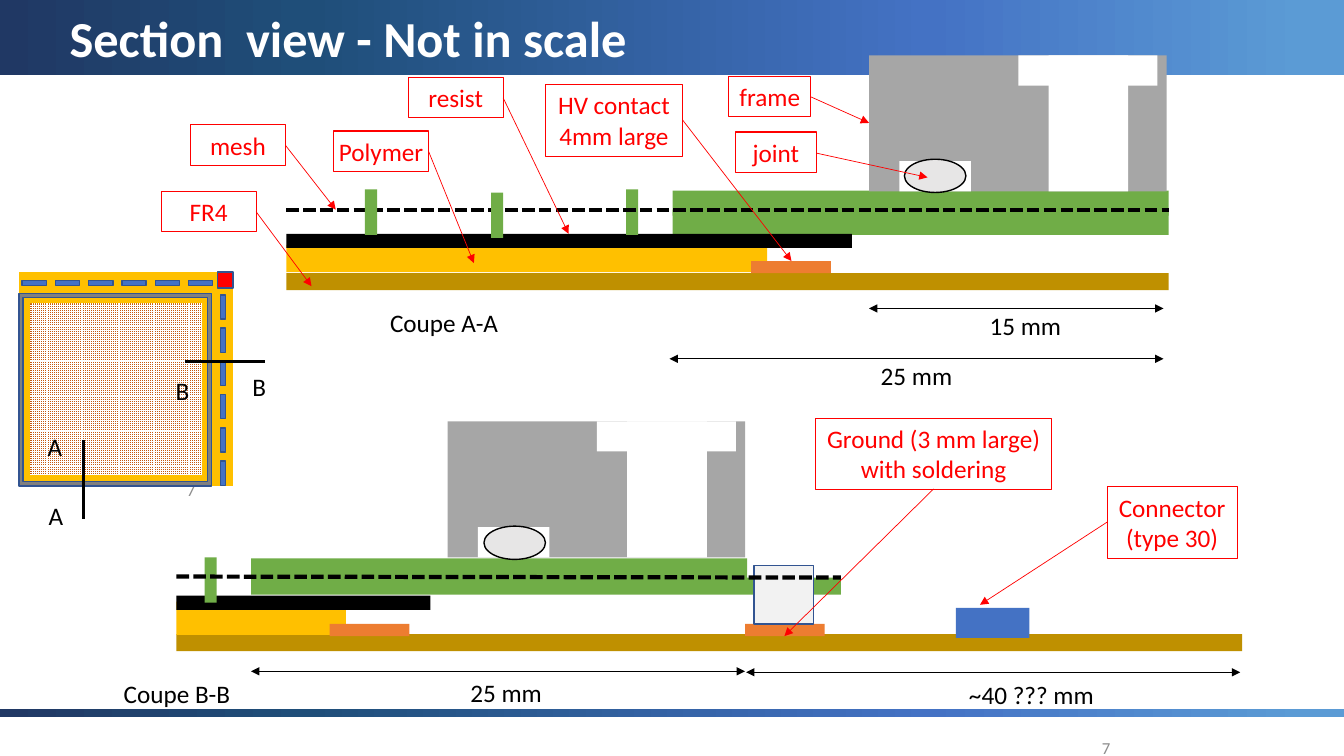
from copy import deepcopy
from dataclasses import dataclass

from lxml.etree import SubElement
from pptx import Presentation
from pptx.dml.color import RGBColor
from pptx.enum.dml import MSO_LINE, MSO_PATTERN
from pptx.enum.shapes import MSO_CONNECTOR as Link, MSO_SHAPE as Preset
from pptx.enum.text import MSO_ANCHOR as Anchor, PP_ALIGN as Align
from pptx.oxml.ns import qn
from pptx.util import Inches, Pt


@dataclass(frozen=True)
class Theme:
    font: str = "Calibri"
    title_size: int = 36
    label_size: int = 18
    number_size: int = 12
    white: str = "FFFFFF"
    black: str = "000000"
    red: str = "FF0000"
    number: str = "8C8C8C"
    board: str = "BF9000"
    green: str = "70AD47"
    yellow: str = "FFC000"
    copper: str = "ED7D31"
    grid: str = "C55A11"
    frame: str = "A6A6A6"
    rim: str = "808080"
    joint: str = "E7E6E6"
    solder: str = "F2F2F2"
    blue: str = "4472C4"
    outline: str = "325491"
    band: tuple = ((0, "203864"), (0.23, "1F4E79"), (0.69, "4472C4"), (0.97, "5B9BD5"))


def rgb(code):
    return RGBColor.from_string(code)


def apply(target, values):
    for name, value in values.items():
        setattr(target, name, value)


class Drawing:
    def __init__(self, page, theme):
        self.page, self.theme = page, theme

    def style(self, shape, fill=None, line=None, width=1):
        shape.shadow.inherit = False
        if fill:
            shape.fill.solid()
            shape.fill.fore_color.rgb = rgb(fill)
        else:
            shape.fill.background()
        if line:
            shape.line.color.rgb = rgb(line)
            shape.line.width = Pt(width)
        else:
            shape.line.fill.background()
        return shape

    def block(self, x, y, w, h, fill=None, line=None, width=1, preset=Preset.RECTANGLE):
        shape = self.page.shapes.add_shape(preset, *map(Inches, (x, y, w, h)))
        return self.style(shape, fill, line, width)

    def band(self, y, h):
        shape = self.block(0, y, 13.33, h)
        shape.fill.gradient()
        shape.fill.gradient_angle = 0
        stops = shape.element.spPr.find(qn("a:gradFill")).find(qn("a:gsLst"))
        while len(stops) < len(self.theme.band):
            stops.append(deepcopy(stops[0]))
        for stop, (position, code) in zip(shape.fill.gradient_stops, self.theme.band):
            stop.position = position
            stop.color.rgb = rgb(code)

    def set_text(self, box, text, color, size, **changes):
        frame = box.text_frame
        apply(frame, {"word_wrap": False, "vertical_anchor": Anchor.TOP})
        frame.text = text
        for para in frame.paragraphs:
            para.alignment = changes.get("align", Align.CENTER)
            apply(para.font, {"name": self.theme.font, "size": Pt(size),
                              "bold": changes.get("bold", False)})
            para.font.color.rgb = rgb(color)
        return frame

    def title(self, text):
        box = self.page.shapes.title
        apply(box, dict(zip(("left", "top", "width", "height"),
                            map(Inches, (0.59, 0.02, 7.39, 0.71)))))
        self.set_text(box, text, self.theme.white, self.theme.title_size,
                      align=Align.LEFT, bold=True)
        box.element.getparent().append(box.element)  # bring in front of the band

    def label(self, x, y, w, text):
        box = self.page.shapes.add_textbox(*map(Inches, (x, y, w, 0.4)))
        self.set_text(box, text, self.theme.black, self.theme.label_size)

    def number(self, x, y, w, h):
        box = self.page.shapes.add_textbox(*map(Inches, (x, y, w, h)))
        frame = self.set_text(box, "7", self.theme.number, self.theme.number_size)
        frame.vertical_anchor = Anchor.MIDDLE

    def line(self, x1, y1, x2, y2, color, width, ends=(), dashed=False):
        link = self.page.shapes.add_connector(Link.STRAIGHT, *map(Inches, (x1, y1, x2, y2)))
        link.line.color.rgb = rgb(color)
        link.line.width = Pt(width)
        if dashed:
            link.line.dash_style = MSO_LINE.SQUARE_DOT
        properties = link.element.spPr
        for end in ends:
            SubElement(properties.find(qn("a:ln")), qn(f"a:{end}"), type="triangle")
        SubElement(properties, qn("a:effectLst"))

    def dimension(self, x1, x2, y):
        self.line(x1, y, x2, y, self.theme.black, 0.5, ("headEnd", "tailEnd"))

    def callout(self, text, area, start, end):
        red = self.theme.red
        self.line(*start, *end, red, 0.5, ("tailEnd",))
        self.set_text(self.block(*area, line=red, width=0.75), text, red, self.theme.label_size)

    def frame(self, x, y):
        self.block(x, y, 2.95, 1.35, self.theme.frame)
        for dx, dy, w, h in ((0.3, 1.05, 0.71, 0.3), (1.78, 0, 0.79, 1.35), (1.48, 0, 1.38, 0.3)):
            self.block(x + dx, y + dy, w, h, self.theme.white)

    def joint(self, x, y):
        self.block(x, y, 0.61, 0.33, self.theme.joint, self.theme.black, preset=Preset.OVAL)

    def rim(self, x, y, size, edge):
        far_x, far_y = x + size, y + size
        outside = [(x, y), (far_x, y), (far_x, far_y), (x, far_y)]
        inside = [(x + edge, y + edge), (x + edge, far_y - edge),
                  (far_x - edge, far_y - edge), (far_x - edge, y + edge)]
        outside, inside = ([(Inches(a), Inches(b)) for a, b in ring] for ring in (outside, inside))
        builder = self.page.shapes.build_freeform(*outside[0], scale=1.0)
        builder.add_line_segments(outside[1:], close=True)
        builder.move_to(*inside[0])
        builder.add_line_segments(inside[1:], close=True)
        self.style(builder.convert_to_shape(), self.theme.rim, self.theme.outline)


def main():
    deck = Presentation()
    deck.slide_width, deck.slide_height = Inches(13.33), Inches(7.5)
    theme = Theme()
    draw = Drawing(deck.slides.add_slide(deck.slide_layouts[5]), theme)

    # Bands, title and page number
    draw.band(0, 0.74)
    draw.band(7.03, 0.08)
    draw.title("Section  view - Not in scale")
    draw.number(9.47, 7.22, 3, 0.4)

    # Section A-A
    for layer in ((2.84, 2.71, 8.75, 0.17, theme.board), (6.67, 2.08, 4.92, 0.25, theme.green),
                  (2.84, 2.43, 4.77, 0.27, theme.yellow), (2.84, 2.32, 5.61, 0.14, theme.black),
                  (6.67, 1.89, 4.92, 0.25, theme.green), (6.21, 1.88, 0.12, 0.45, theme.green)):
        draw.block(*layer)
    draw.line(2.84, 2.08, 11.59, 2.08, theme.black, 3, dashed=True)
    for x, y in ((4.87, 1.91), (3.62, 1.88)):
        draw.block(x, y, 0.12, 0.45, theme.green)
    draw.block(7.45, 2.59, 0.79, 0.12, theme.copper)
    draw.frame(8.62, 0.55)
    draw.joint(8.97, 1.58)

    # Section B-B
    for layer in ((1.75, 6.29, 10.57, 0.17, theme.board), (2.49, 5.73, 5.85, 0.17, theme.green),
                  (1.75, 5.97, 1.68, 0.33, theme.yellow), (1.75, 5.91, 2.52, 0.14, theme.black),
                  (2.49, 5.54, 4.92, 0.25, theme.green), (2.03, 5.53, 0.12, 0.45, theme.green),
                  (3.27, 6.19, 0.79, 0.12, theme.copper), (9.48, 6.03, 0.73, 0.3, theme.blue),
                  (7.39, 6.19, 0.79, 0.12, theme.copper), (7.48, 5.73, 0.59, 0.21, theme.white),
                  (7.48, 5.61, 0.59, 0.58, theme.solder, theme.outline)):
        draw.block(*layer)
    draw.frame(4.44, 4.18)
    draw.joint(4.8, 5.22)
    draw.line(1.75, 5.72, 8.34, 5.73, theme.black, 3, dashed=True)

    # Top view of the detector
    draw.number(1.25, 4.77, 1.29, 0.17)
    draw.block(0.19, 2.7, 2.12, 2.12, theme.yellow)
    mesh = draw.block(0.3, 3.01, 1.7, 1.7)
    mesh.fill.patterned()
    mesh.fill.pattern = MSO_PATTERN.SMALL_GRID
    mesh.fill.fore_color.rgb = rgb(theme.white)
    mesh.fill.back_color.rgb = rgb(theme.grid)
    draw.rim(0.19, 2.91, 1.91, 0.04)
    for step in range(6):
        draw.block(0.22 + 0.33 * step, 2.78, 0.24, 0.05, theme.blue, theme.outline)
        draw.block(2.09, 3.02 + 0.33 * step, 0.24, 0.05, theme.blue, theme.outline).rotation = 90
    draw.block(2.16, 2.7, 0.15, 0.16, theme.red, theme.outline)
    draw.line(0.83, 4.37, 0.83, 5.15, theme.black, 2.25)
    draw.line(1.84, 3.59, 2.63, 3.59, theme.black, 2.25)

    # Dimensions and section names
    for span in ((6.64, 11.54, 3.56), (8.62, 11.54, 3.06), (2.49, 7.39, 6.66), (7.4, 12.3, 6.67)):
        draw.dimension(*span)
    for label in ((0.37, 4.23, 0.35, "A"), (0.38, 4.91, 0.35, "A"), (2.4, 3.63, 0.34, "B"),
                  (1.64, 3.67, 0.34, "B"), (3.76, 3, 1.29, "Coupe A-A"),
                  (1.12, 6.68, 1.27, "Coupe B-B"), (8.62, 3.53, 0.94, "25 mm"),
                  (9.7, 3.03, 0.94, "15 mm"), (4.55, 6.67, 0.94, "25 mm"),
                  (9.46, 6.69, 1.54, "~40 ??? mm")):
        draw.label(*label)

    # Callouts: text, box, arrow start, arrow end
    for callout in (
            ("frame", (7.23, 0.76, 0.81, 0.4), (8.04, 0.96), (8.62, 1.22)),
            ("Polymer", (3.31, 1.3, 0.94, 0.4), (4.25, 1.5), (4.7, 2.61)),
            ("resist", (4.05, 0.77, 0.94, 0.4), (4.99, 0.97), (5.64, 2.32)),
            ("HV contact\n4mm large", (5.41, 0.84, 1.36, 0.71), (6.77, 1.19), (7.85, 2.59)),
            ("mesh", (1.89, 1.24, 0.94, 0.4), (2.83, 1.44), (3.33, 2.08)),
            ("Connector\n(type 30)", (10.98, 4.83, 1.29, 0.71), (10.98, 5.18), (9.72, 6)),
            ("Ground (3 mm large)\nwith soldering", (8.09, 4.15, 2.34, 0.71), (9.26, 4.85), (7.78, 6.31)),
            ("joint", (7.29, 1.31, 0.81, 0.4), (8.1, 1.52), (9.2, 1.76)),
            ("FR4", (1.6, 1.9, 0.94, 0.4), (2.54, 2.1), (3.09, 2.84))):
        draw.callout(*callout)

    deck.save("out.pptx")


if __name__ == "__main__":
    main()
